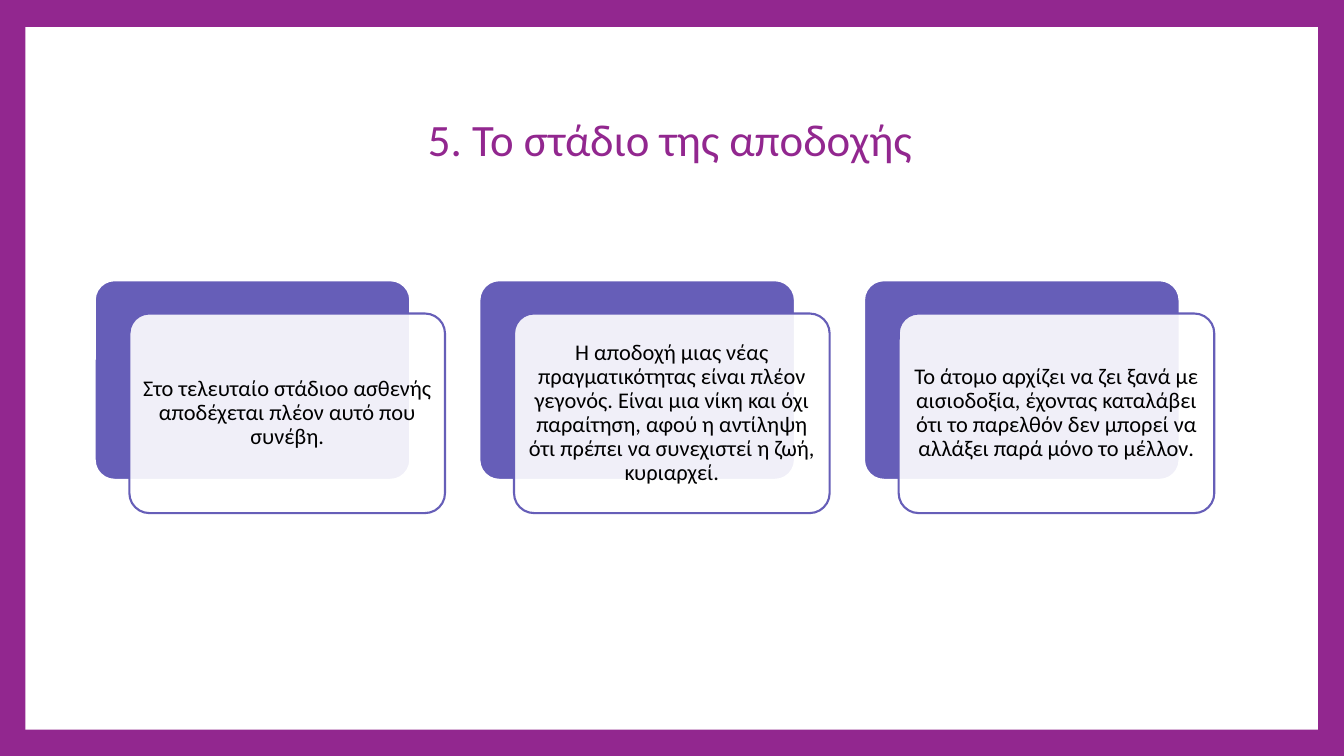
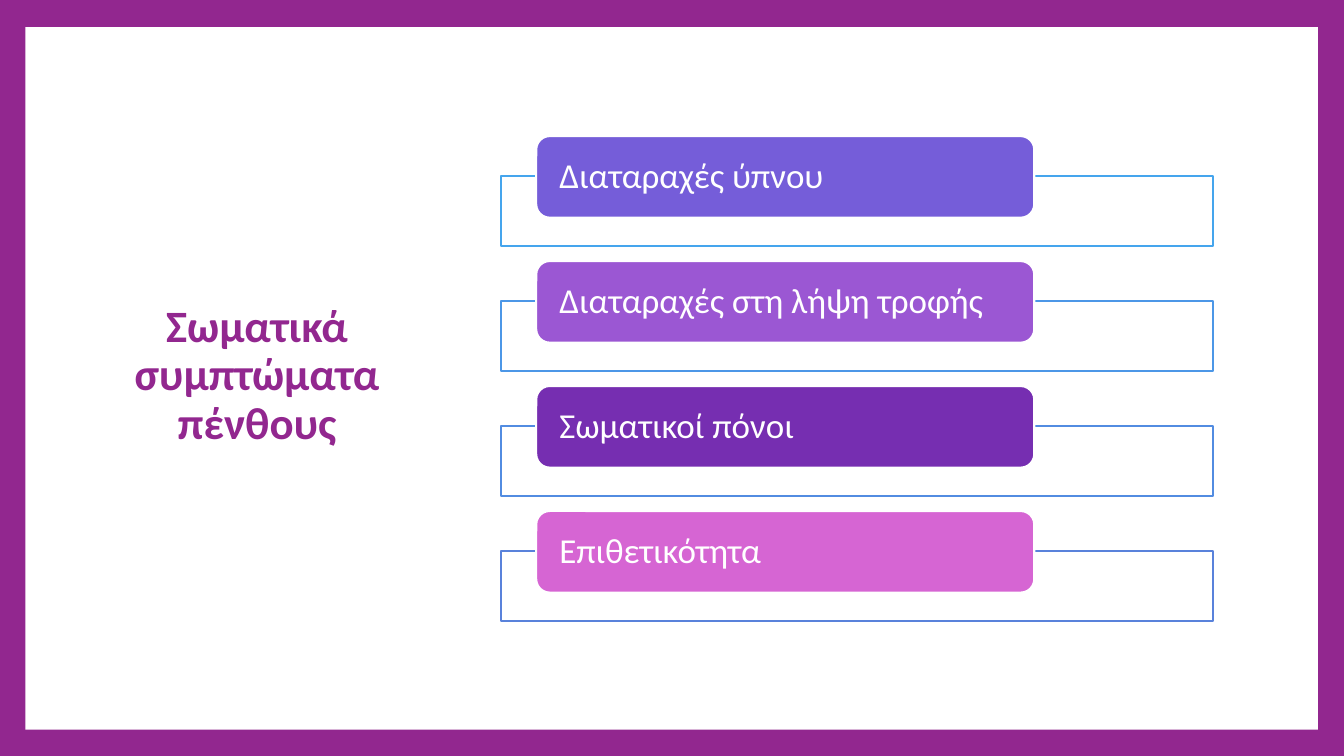
import pptx
import pptx.dml.color
import pptx.enum.shapes
import pptx.enum.text
import pptx.oxml
import pptx.oxml.ns
import pptx.util
from lxml import etree

WIDTH = pptx.util.Inches(13.33)
HEIGHT = pptx.util.Inches(7.5)
FONT = "Calibri"
COLORS = {
    "frame": "92278F",
    "white": "FFFFFF",
    "text": "000000",
    "card": "665EB8",
}
RECTANGLE = pptx.enum.shapes.MSO_SHAPE.RECTANGLE
ROUNDED = pptx.enum.shapes.MSO_SHAPE.ROUNDED_RECTANGLE
CENTER = pptx.enum.text.PP_ALIGN.CENTER
LEFT = pptx.enum.text.PP_ALIGN.LEFT

CARDS = [
    "Στο τελευταίο στάδιοο ασθενής αποδέχεται πλέον αυτό που συνέβη.",
    "Η αποδοχή μιας νέας πραγματικότητας είναι πλέον γεγονός. Είναι μια νίκη και όχι "
    "παραίτηση, αφού η αντίληψη ότι πρέπει να συνεχιστεί η ζωή, κυριαρχεί.",
    "Το άτομο αρχίζει να ζει ξανά με αισιοδοξία, έχοντας καταλάβει ότι το παρελθόν δεν "
    "μπορεί να αλλάξει παρά μόνο το μέλλον.",
]
# Wording, label fill, outline colour
SYMPTOMS = [
    ("Διαταραχές ύπνου", "755DD9", "45A5ED"),
    ("Διαταραχές στη λήψη τροφής", "9B57D3", "4C97E7"),
    ("Σωματικοί πόνοι", "762EB1", "528CE1"),
    ("Επιθετικότητα", "D665D3", "5982DB"),
]


def place(left, top, width, height):
    """Turn percentages of the slide's size into lengths."""
    return (int(WIDTH * left / 100), int(HEIGHT * top / 100),
            int(WIDTH * width / 100), int(HEIGHT * height / 100))


def rgb(color):
    return pptx.dml.color.RGBColor.from_string(color)


def add_box(slide, kind, box, fill, line=None, opacity=100, corner=None):
    shape = slide.shapes.add_shape(kind, *place(*box))
    shape.shadow.inherit = False
    shape.fill.solid()
    shape.fill.fore_color.rgb = rgb(fill)
    if opacity < 100:
        color = shape.fill._xPr.find(".//" + pptx.oxml.ns.qn("a:srgbClr"))
        alpha = etree.SubElement(color, pptx.oxml.ns.qn("a:alpha"))
        alpha.set("val", str(opacity * 1000))
    if line:
        shape.line.color.rgb = rgb(line)
        shape.line.width = pptx.util.Pt(1.5)
    else:
        shape.line.fill.background()
    if corner is not None:
        shape.adjustments[0] = corner
    return shape


def write(shape, text, size, color, align=CENTER, bold=False, insets=(0.1, 0.05)):
    """Fill a shape with one paragraph; insets are horizontal and vertical inches."""
    frame = shape.text_frame
    frame.word_wrap = True
    frame.vertical_anchor = pptx.enum.text.MSO_ANCHOR.MIDDLE
    frame.margin_left = frame.margin_right = pptx.util.Inches(insets[0])
    frame.margin_top = frame.margin_bottom = pptx.util.Inches(insets[1])
    frame.text = text
    paragraph = frame.paragraphs[0]
    paragraph.alignment = align
    paragraph.line_spacing = 0.9
    font = paragraph.runs[0].font
    font.name = FONT
    font.size = pptx.util.Pt(size)
    font.bold = bold
    font.color.rgb = rgb(color)


def add_framed_slide(presentation, title, title_box, bold=False):
    slide = presentation.slides.add_slide(presentation.slide_layouts[6])
    slide.background.fill.solid()
    slide.background.fill.fore_color.rgb = rgb(COLORS["frame"])
    add_box(slide, RECTANGLE, (1.88, 3.6, 96.17, 92.93), COLORS["white"])
    heading = slide.shapes.add_textbox(*place(*title_box))
    write(heading, title, 32, COLORS["frame"], bold=bold)
    return slide


def add_card(slide, column, text):
    """Add a coloured card with a translucent text card shifted over it."""
    width, height = 23.48, 26.4
    left, top = 7.05 + column * 28.62, 37.07
    add_box(slide, ROUNDED, (left, top, width, height),
            COLORS["card"], COLORS["white"], corner=0.1)
    front = add_box(slide, ROUNDED, (left + 2.58, top + 4.4, width, height),
                    COLORS["white"], COLORS["card"], opacity=90, corner=0.1)
    write(front, text, 16, COLORS["text"], insets=(0.07, 0.07))


def add_symptom(slide, row, text, fill, line):
    """Add an outlined strip with a coloured label across its upper edge."""
    top = 18 + row * 16.53
    add_box(slide, RECTANGLE, (37.28, top + 5.33, 52.95, 9.2),
            COLORS["white"], line, opacity=90)
    label = add_box(slide, ROUNDED, (39.9, top, 37.06, 10.8), fill, COLORS["white"])
    write(label, text, 25, COLORS["white"], align=LEFT, insets=(0.19, 0))


def main():
    presentation = pptx.Presentation()
    presentation.slide_width = WIDTH
    presentation.slide_height = HEIGHT

    acceptance = add_framed_slide(presentation, "5. Το στάδιο της αποδοχής",
                                  (9.37, 8.93, 81, 19.73))
    for column, text in enumerate(CARDS):
        add_card(acceptance, column, text)

    symptoms = add_framed_slide(presentation, "Σωματικά συμπτώματα πένθους",
                                (5.33, 8.93, 27.6, 81.73), bold=True)
    for row, (text, fill, line) in enumerate(SYMPTOMS):
        add_symptom(symptoms, row, text, fill, line)

    presentation.save("out.pptx")


if __name__ == "__main__":
    main()
